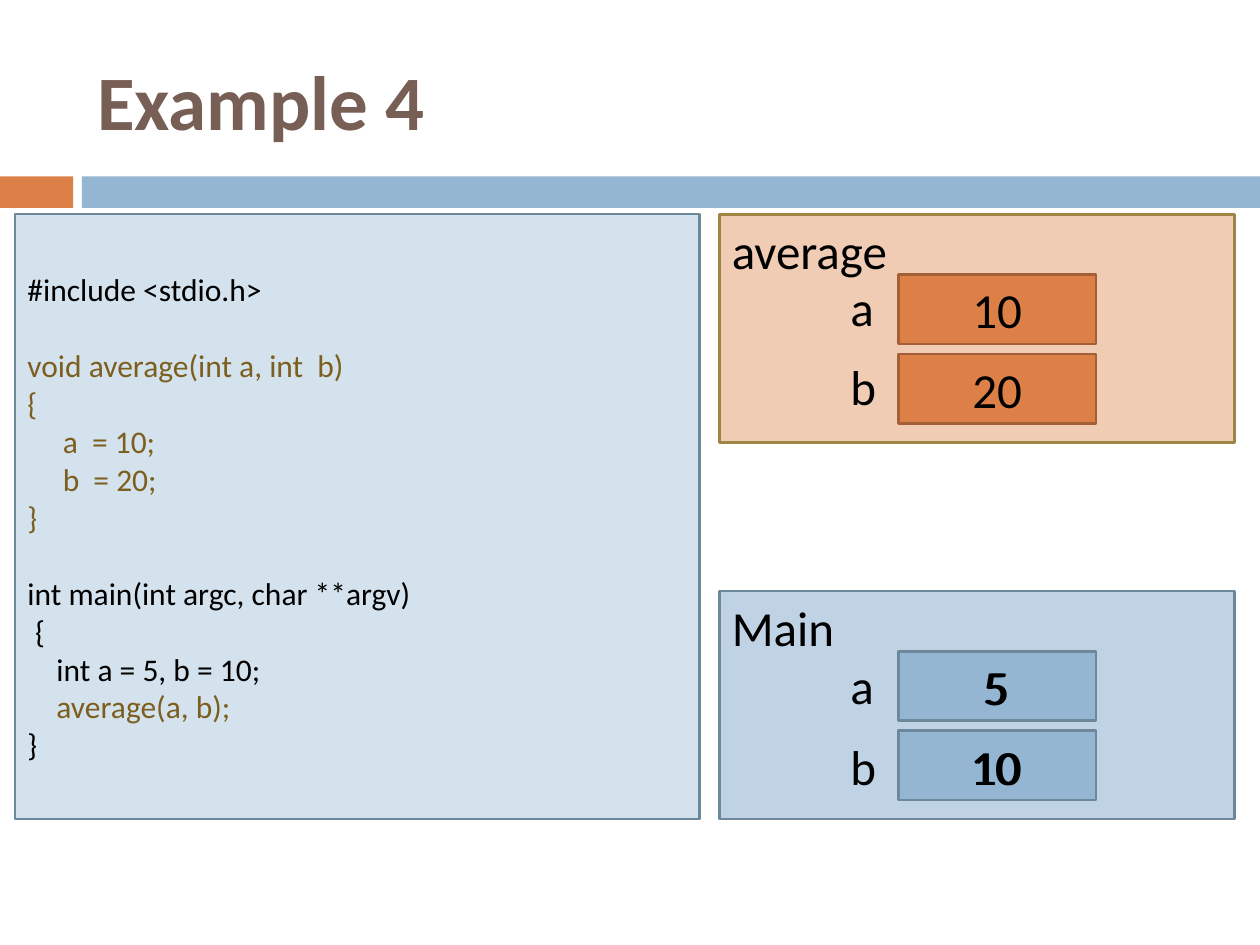
from pptx import Presentation
from pptx.dml.color import RGBColor
from pptx.enum.shapes import MSO_SHAPE
from pptx.enum.text import MSO_ANCHOR, PP_ALIGN
from pptx.util import Inches, Pt

BLACK, BROWN, ORANGE, BLUE, SLATE = "000000", "7C5F1E", "DD8047", "94B6D2", "6D879B"
CODE = [
    ("#include <stdio.h>", BLACK, 0, 0),
    ("void average(int a, int  b)", BROWN, 0, 22),
    ("{", BROWN, 0, 0),
    ("a  = 10;", BROWN, 0.28, 0),
    ("b  = 20;", BROWN, 0.28, 0),
    ("}", BROWN, 0, 0),
    ("int main(int argc, char **argv)", BLACK, 0, 22),
    ("{", BLACK, 0.06, 0),
    ("int a = 5, b = 10;", BLACK, 0.23, 0),
    ("average(a, b);", BROWN, 0.23, 0),
    ("}", BLACK, 0, 0),
]
FRAMES = [
    ("average", 1.7, ("F1CCB5", "A08444"), (ORANGE, "A35F35"),
     [("a", "10", 2.15), ("b", "20", 2.78)]),
    ("Main", 4.69, ("BFD3E4", SLATE), (BLUE, SLATE),
     [("a", "5", 5.15), ("b", "10", 5.8)]),
]


def rgb(value):
    return RGBColor.from_string(value)


class Deck:
    """Holds the text style and the current slide, and adds elements to it."""

    def __init__(self, slide, font="Calibri", size=28):
        self.s = slide
        self.font = font
        self.size = size

    def text(self, tf, lines, size=None, bold=False, align=PP_ALIGN.LEFT,
             anchor=MSO_ANCHOR.TOP):
        tf.word_wrap = True
        tf.vertical_anchor = anchor
        style = {"name": self.font, "size": Pt(size or self.size), "bold": bold}
        for i, (content, color, indent, gap) in enumerate(lines):
            p = tf.add_paragraph() if i else tf.paragraphs[0]
            p.alignment = align
            p.space_before = Pt(gap)
            if indent:
                p._p.get_or_add_pPr().set("marL", str(Inches(indent)))
            r = p.add_run()
            r.text = content
            for name, value in style.items():
                setattr(r.font, name, value)
            r.font.color.rgb = rgb(color)

    def title(self, content, box):
        sp = self.s.shapes.title
        for name, value in zip(("left", "top", "width", "height"), box):
            setattr(sp, name, Inches(value))
        self.text(sp.text_frame, [(content, "775F55", 0, 0)], 44, True,
                  anchor=MSO_ANCHOR.MIDDLE)

    def rect(self, box, fill, line=None, lines=(), **style):
        sp = self.s.shapes.add_shape(MSO_SHAPE.RECTANGLE, *map(Inches, box))
        sp.shadow.inherit = False
        sp.fill.solid()
        sp.fill.fore_color.rgb = rgb(fill)
        if line:
            sp.line.color.rgb = rgb(line)
            sp.line.width = Pt(1.5)
        else:
            sp.line.fill.background()
        self.text(sp.text_frame, lines, **style)

    def label(self, content, box):
        sp = self.s.shapes.add_textbox(*map(Inches, box))
        self.text(sp.text_frame, [(content, BLACK, 0, 0)])

    def frame(self, name, top, panel, cell, variables):
        self.rect((5.71, top, 4.09, 1.81), *panel, [(name, BLACK, 0, 0)])
        for row, (variable, value, label_top) in enumerate(variables):
            self.rect((7.13, top + 0.48 + 0.63 * row, 1.57, 0.55), *cell,
                      [(value, BLACK, 0, 0)], align=PP_ALIGN.CENTER,
                      anchor=MSO_ANCHOR.MIDDLE)
            self.label(variable, (6.65, label_top, 0.55, 0.57))


def main():
    prs = Presentation()
    prs.slide_width, prs.slide_height = Inches(10), Inches(7.5)
    deck = Deck(prs.slides.add_slide(prs.slide_layouts[5]))
    deck.rect((0, 1.4, 0.58, 0.25), ORANGE)
    deck.rect((0.65, 1.4, 9.35, 0.25), BLUE)
    deck.title("Example 4", (0.67, 0.25, 8.92, 1.08))
    deck.rect((0.12, 1.7, 5.43, 4.8), "D4E2ED", SLATE, CODE, size=18,
              anchor=MSO_ANCHOR.MIDDLE)
    for frame in FRAMES:
        deck.frame(*frame)
    deck.label("5", (7.7, 5.16, 0.39, 0.57))
    deck.label("10", (7.6, 5.8, 0.71, 0.57))
    prs.save("out.pptx")


if __name__ == "__main__":
    main()
